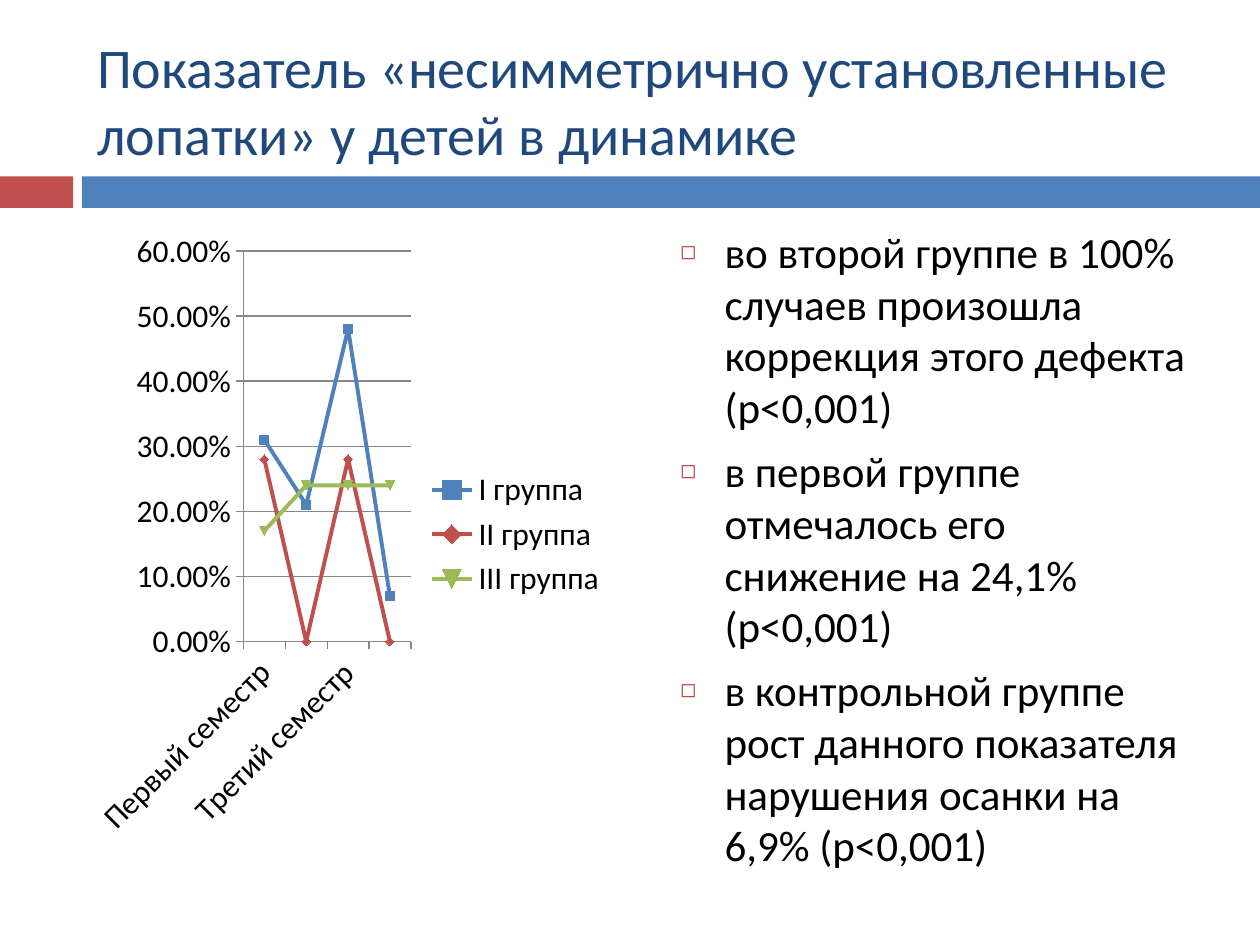
from lxml import etree
from pptx import Presentation
from pptx.chart.data import CategoryChartData
from pptx.dml.color import RGBColor
from pptx.enum.chart import XL_CHART_TYPE, XL_LEGEND_POSITION, XL_TICK_MARK
from pptx.enum.shapes import MSO_SHAPE
from pptx.enum.text import MSO_ANCHOR, MSO_AUTO_SIZE, PP_ALIGN
from pptx.oxml.ns import qn
from pptx.util import Inches, Pt

RECT = MSO_SHAPE.RECTANGLE
LINE = XL_CHART_TYPE.LINE_MARKERS
RIGHT = XL_LEGEND_POSITION.RIGHT
OUT = XL_TICK_MARK.OUTSIDE
LEFT, MID, TOP = PP_ALIGN.LEFT, MSO_ANCHOR.MIDDLE, MSO_ANCHOR.TOP
FIXED = MSO_AUTO_SIZE.NONE

FONT = "Calibri"
COLORS = {"blue": "4F81BD", "red": "C0504D", "green": "9BBB59",
          "navy": "1F497D", "black": "000000", "gray": "878787"}

TITLE = "Показатель «несимметрично установленные лопатки» у детей в динамике"
POINTS = [
    "во второй группе в 100% случаев произошла коррекция этого дефекта (p<0,001)",
    "в первой группе отмечалось его снижение на 24,1% (p<0,001)",
    "в контрольной группе рост данного показателя нарушения осанки на 6,9% (p<0,001)",
]
TERMS = ["Первый семестр", "Второй семестр", "Третий семестр", "Четвертый семестр"]
GROUPS = [
    ("I группа", [0.31, 0.21, 0.48, 0.07], "blue"),
    ("II группа", [0.28, 0, 0.28, 0], "red"),
    ("III группа", [0.17, 0.24, 0.24, 0.24], "green"),
]


def color(name):
    return RGBColor.from_string(COLORS[name])


def place(shape, box):
    shape.left, shape.top, shape.width, shape.height = map(Inches, box)


def style(font, size, name):
    font.name, font.size = FONT, Pt(size)
    font.color.rgb = color(name)


def add_band(slide, box, name):
    bar = slide.shapes.add_shape(RECT, *map(Inches, box))
    bar.shadow.inherit = False
    bar.fill.solid()
    bar.fill.fore_color.rgb = color(name)
    bar.line.fill.background()


def set_frame(shape, box, anchor):
    place(shape, box)
    frame = shape.text_frame
    frame.word_wrap = True
    frame.auto_size = FIXED
    frame.vertical_anchor = anchor
    return frame


def fill_title(shape, box):
    para = set_frame(shape, box, MID).paragraphs[0]
    para.alignment = LEFT
    run = para.add_run()
    run.text = TITLE
    style(run.font, 32, "navy")


def add_bullet(para):
    """Give the paragraph a hanging red square."""
    props = para._p.get_or_add_pPr()
    props.set("marL", str(Inches(0.35)))
    props.set("indent", str(-Inches(0.35)))
    tint = etree.SubElement(props, qn("a:buClr"))
    etree.SubElement(tint, qn("a:srgbClr"), val=COLORS["red"])
    etree.SubElement(props, qn("a:buSzPct"), val="60000")
    etree.SubElement(props, qn("a:buChar"), char="◻")


def fill_list(shape, box):
    frame = set_frame(shape, box, TOP)
    for i, point in enumerate(POINTS):
        para = frame.add_paragraph() if i else frame.paragraphs[0]
        para.space_before = Pt(7)
        add_bullet(para)
        run = para.add_run()
        run.text = point
        style(run.font, 24.6, "black")


def style_axis(axis):
    axis.major_tick_mark = OUT
    axis.format.line.color.rgb = color("gray")


def add_graph(slide, box):
    data = CategoryChartData(number_format="0.00%")
    data.categories = TERMS
    for name, values, _ in GROUPS:
        data.add_series(name, values)
    chart = slide.shapes.add_chart(LINE, *map(Inches, box), data).chart
    style(chart.font, 18, "black")
    chart.has_title = False
    chart.has_legend = True
    chart.legend.position = RIGHT
    chart.legend.include_in_layout = False

    scale = chart.value_axis
    scale.minimum_scale, scale.maximum_scale, scale.major_unit = 0, 0.6, 0.1
    scale.tick_labels.number_format = "0.00%"
    scale.tick_labels.number_format_is_linked = False
    scale.has_major_gridlines = True
    scale.major_gridlines.format.line.color.rgb = color("gray")
    style_axis(scale)
    style_axis(chart.category_axis)

    plot = chart.plots[0]
    plot.vary_by_categories = False
    for line, (_, _, name) in zip(plot.series, GROUPS):
        line.smooth = False
        line.format.line.color.rgb = color(name)
        line.format.line.width = Pt(2.25)
        line.marker.size = 5
        line.marker.format.fill.solid()
        line.marker.format.fill.fore_color.rgb = color(name)
        line.marker.format.line.color.rgb = color(name)


def main():
    deck = Presentation()
    deck.slide_width, deck.slide_height = Inches(10), Inches(7.5)
    slide = deck.slides.add_slide(deck.slide_layouts[1])
    add_band(slide, (0, 1.4, 0.58, 0.25), "red")
    add_band(slide, (0.65, 1.4, 9.35, 0.25), "blue")
    fill_title(slide.shapes.title, (0.67, 0.25, 8.92, 1.08))
    fill_list(slide.placeholders[1], (5.3, 1.74, 4.25, 5))
    add_graph(slide, (0.67, 1.74, 4.25, 5))
    deck.save("out.pptx")


if __name__ == "__main__":
    main()
